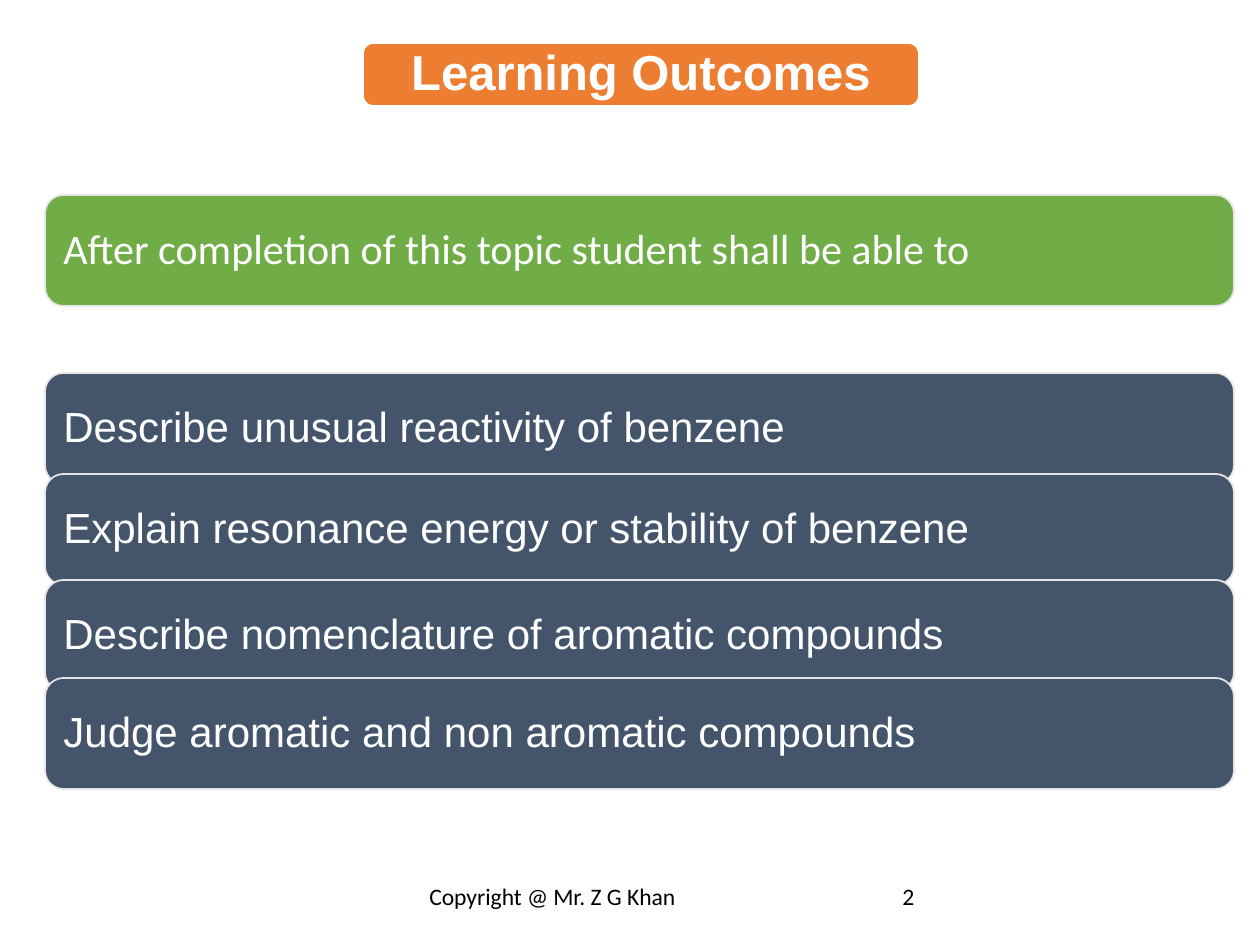
"""Build the learning outcomes slide with its stacked outcome bars."""
from lxml import etree
from pptx import Presentation
from pptx.dml.color import RGBColor
from pptx.enum.shapes import MSO_SHAPE as Shape
from pptx.enum.text import MSO_ANCHOR as Anchor, MSO_AUTO_SIZE as AutoSize, PP_ALIGN as Align
from pptx.util import Pt

PX = 914400 / 126
GREEN, NAVY, ORANGE = "70AD47", "44546A", "ED7D31"
MARGINS = ("margin_left", "margin_right", "margin_top", "margin_bottom")


def add_bar(left, top, width, height, fill, outline):
    bar = slide.shapes.add_shape(
        Shape.ROUNDED_RECTANGLE, *(round(n * PX) for n in (left, top, width, height)))
    bar.shadow.inherit = False
    bar.fill.solid()
    bar.fill.fore_color.rgb = RGBColor.from_string(fill)
    bar.line.color.rgb = RGBColor.from_string(outline)
    bar.line.width = Pt(1)
    return bar


def write(holder, text, font, size, color, bold=False, align=Align.LEFT,
          inset=13, anchor=Anchor.MIDDLE, spacing=0.9):
    frame = holder.text_frame
    frame.text = text
    frame_format = {"word_wrap": True, "auto_size": AutoSize.NONE, "vertical_anchor": anchor}
    if inset is not None:
        frame_format.update(dict.fromkeys(MARGINS, round(inset * PX)))
    for name, value in frame_format.items():
        setattr(frame, name, value)
    paragraph = frame.paragraphs[0]
    paragraph.alignment = align
    paragraph.line_spacing = spacing
    run_font = paragraph.runs[0].font
    for name, value in {"name": font, "size": Pt(size), "bold": bold}.items():
        setattr(run_font, name, value)
    run_font.color.rgb = RGBColor.from_string(color)


deck = Presentation()
deck.slide_width, deck.slide_height = round(1260 * PX), round(945 * PX)
slide = deck.slides.add_slide(deck.slide_layouts[5])

heading = slide.shapes.title
heading_place = {"left": 366, "top": 46, "width": 550, "height": 58}
for name, value in heading_place.items():
    setattr(heading, name, round(value * PX))
write(heading, "Learning Outcomes", "Arial", 28, "FFFFFF", True, Align.CENTER, 15)
heading_bar = add_bar(363, 43, 556, 63, ORANGE, "FFFFFF")
heading._element.addprevious(heading_bar._element)

outcomes = [
    (195, "After completion of this topic student shall be able to", "Calibri", GREEN, Align.JUSTIFY),
    (373, "Describe unusual reactivity of benzene", "Arial", NAVY, Align.LEFT),
    (474, "Explain resonance energy or stability of benzene", "Arial", NAVY, Align.LEFT),
    (580, "Describe nomenclature of aromatic compounds", "Arial", NAVY, Align.LEFT),
    (678, "Judge aromatic and non aromatic compounds", "Arial", NAVY, Align.LEFT),
]
for top, text, font, fill, align in outcomes:
    outcome = add_bar(45, top, 1189, 111, fill, "E7E6E6")
    write(outcome, text, font, 24, "FFFFFF", align=align)

for left, width, text in [(417, 426, "Copyright @ Mr. Z G Khan"), (890, 284, "2")]:
    footer = slide.shapes.add_textbox(
        *(round(n * PX) for n in (left, 876, width, 50)))
    write(footer, text, "Calibri", 13.5, "000000", inset=None, anchor=Anchor.TOP, spacing=1.0)

deck.save("out.pptx")
